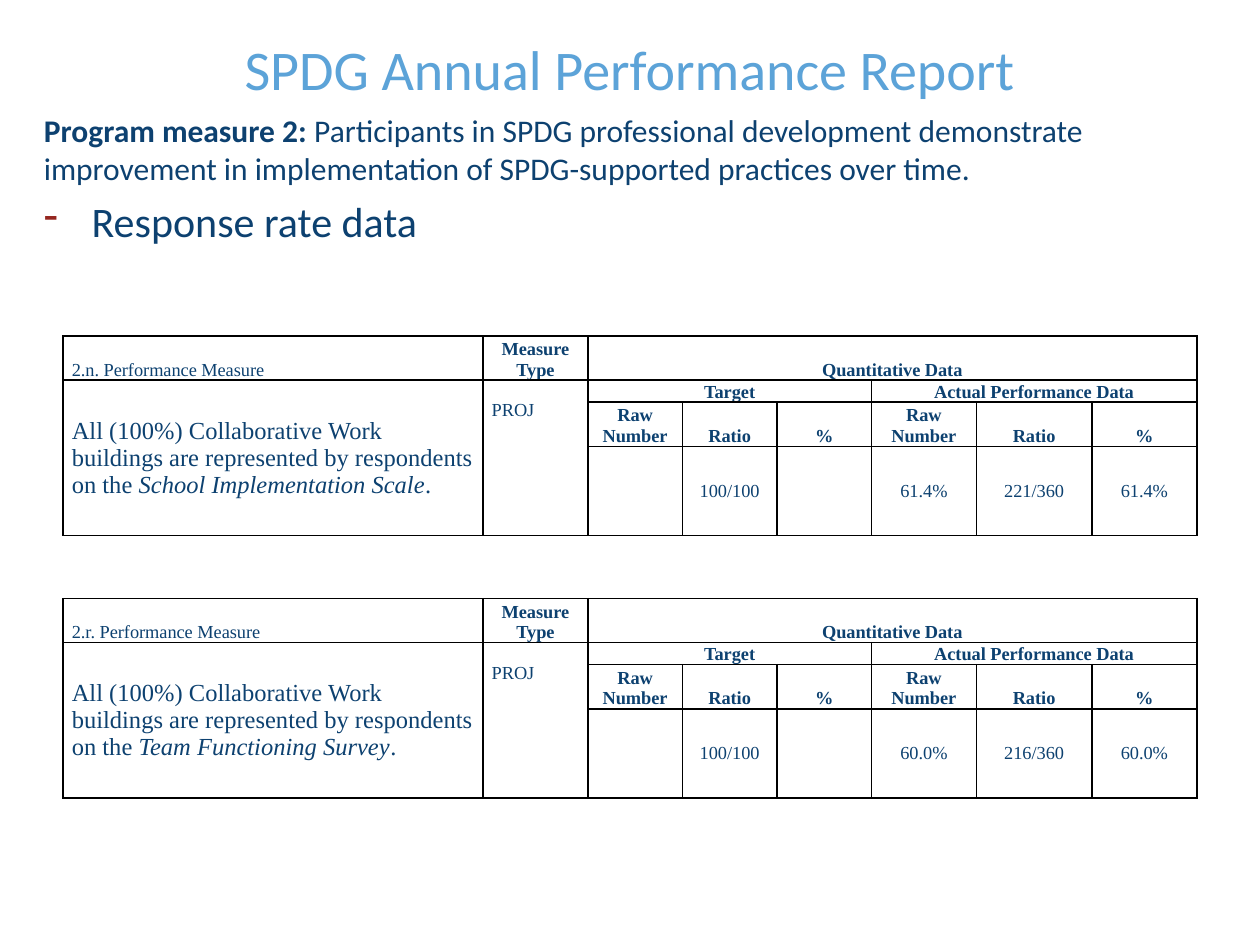
"""Build the SPDG annual performance report slide with its two measure tables."""
from lxml import etree
from pptx import Presentation, util as u
from pptx.dml import color
from pptx.enum import text
from pptx.oxml import ns

COLORS = {"title": "5CA3D8", "body": "0D4170", "bullet": "95261F", "border": "000000", "cell": "FFFFFF"}
CENTER, LEFT = text.PP_ALIGN.CENTER, text.PP_ALIGN.LEFT
TOP, MIDDLE, BOTTOM = text.MSO_ANCHOR.TOP, text.MSO_ANCHOR.MIDDLE, text.MSO_ANCHOR.BOTTOM
UNIT = u.Inches(10) // 120


def write(paragraph, runs, size, name, ink="body", align=LEFT):
    paragraph.alignment = align
    for words, style in runs:
        run = paragraph.add_run()
        run.text = words
        values = {"size": u.Pt(size), "name": name, "bold": "b" in style, "italic": "i" in style}
        for key, value in values.items():
            setattr(run.font, key, value)
        run.font.color.rgb = color.RGBColor.from_string(COLORS[ink])


def add_color(parent, tag, ink):
    holder = etree.SubElement(parent, ns.qn(tag))
    etree.SubElement(holder, ns.qn("a:srgbClr"), val=COLORS[ink])


presentation = Presentation()
presentation.slide_width, presentation.slide_height = 120 * UNIT, 90 * UNIT
slide = presentation.slides.add_slide(presentation.slide_layouts[6])

frames = {}
for part, box, anchor in (("title", (6, 2, 108, 9), MIDDLE), ("body", (3, 10, 114, 20), TOP)):
    frames[part] = slide.shapes.add_textbox(*(side * UNIT for side in box)).text_frame
    for key, value in {"word_wrap": True, "vertical_anchor": anchor}.items():
        setattr(frames[part], key, value)

write(frames["title"].paragraphs[0], [("SPDG Annual Performance Report", "")], 32, "Calibri", "title", CENTER)
write(frames["body"].paragraphs[0], [
    ("Program measure 2: ", "b"),
    ("Participants in SPDG professional development demonstrate improvement in implementation "
     "of SPDG-supported practices over time.", ""),
], 18, "Calibri")
response = frames["body"].add_paragraph()
response.space_before = u.Pt(4.8)
properties = response._p.get_or_add_pPr()
properties.set("marL", str(u.Inches(0.38)))
properties.set("indent", str(-u.Inches(0.38)))
add_color(properties, "a:buClr", "bullet")
etree.SubElement(properties, ns.qn("a:buChar"), char="-")
write(response, [("Response rate data", "")], 24, "Calibri")

column_units = (40, 10, 9, 9, 9, 10, 11, 10)
row_units = (3.9, 1.95, 3.9, 8.5)
merges = ((0, 2, 0, 7), (1, 0, 3, 0), (1, 1, 3, 1), (1, 2, 1, 4), (1, 5, 1, 7))
headings = {
    (0, 1): "Measure Type", (0, 2): "Quantitative Data",
    (1, 2): "Target", (1, 5): "Actual Performance Data",
}
for group in (2, 5):
    for offset, heading in enumerate(("Raw Number", "Ratio", "%")):
        headings[2, group + offset] = heading
measures = (
    (32, "2.n.", "School Implementation Scale", "61.4%", "221/360"),
    (57, "2.r.", "Team Functioning Survey", "60.0%", "216/360"),
)

for top, number, survey, percent, ratio in measures:
    frame = slide.shapes.add_table(4, 8, 6 * UNIT, top * UNIT, 108 * UNIT, int(sum(row_units) * UNIT))
    table = frame.table
    table.first_row = table.horz_banding = False
    for column, width in zip(table.columns, column_units):
        column.width = width * UNIT
    for row, height in zip(table.rows, row_units):
        row.height = int(height * UNIT)
    for first_row, first_column, last_row, last_column in merges:
        table.cell(first_row, first_column).merge(table.cell(last_row, last_column))

    contents = {place: ([(heading, "b")], 10.5, CENTER, BOTTOM) for place, heading in headings.items()}
    contents[0, 0] = [(f"{number} Performance Measure", "")], 10.5, LEFT, BOTTOM
    contents[1, 0] = [
        ("All (100%) Collaborative Work buildings are represented by respondents on the ", ""),
        (survey, "i"), (".", ""),
    ], 14, LEFT, MIDDLE
    contents[1, 1] = [("PROJ", "")], 10.5, LEFT, TOP
    for column, value in {3: "100/100", 5: percent, 6: ratio, 7: percent}.items():
        contents[3, column] = [(value, "")], 10.5, CENTER, MIDDLE

    for row in range(4):
        for column in range(8):
            cell = table.cell(row, column)
            runs, size, align, anchor = contents.get((row, column), ([], 10.5, CENTER, MIDDLE))
            margins = {
                "margin_left": u.Inches(0.07), "margin_right": u.Inches(0.07),
                "margin_top": u.Inches(0.16 if (row, column) == (1, 1) else 0),
                "margin_bottom": 0, "vertical_anchor": anchor,
            }
            for key, value in margins.items():
                setattr(cell, key, value)
            write(cell.text_frame.paragraphs[0], runs, size, "Times New Roman", align=align)
            cell_properties = cell._tc.get_or_add_tcPr()
            for side in "LRTB":
                line = etree.SubElement(cell_properties, ns.qn(f"a:ln{side}"), w=str(u.Pt(1)))
                add_color(line, "a:solidFill", "border")
            cell.fill.solid()
            cell.fill.fore_color.rgb = color.RGBColor.from_string(COLORS["cell"])

presentation.save("out.pptx")
